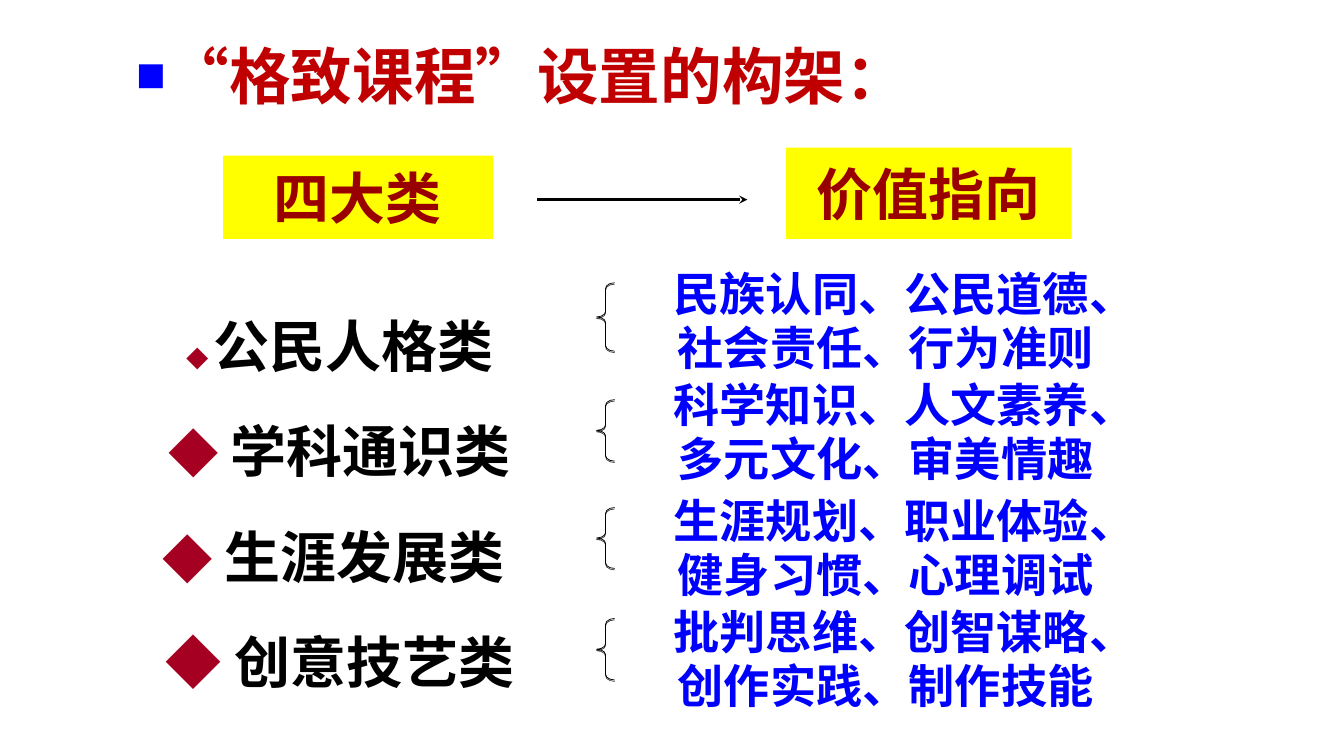
from lxml.etree import SubElement
from pptx import Presentation
from pptx.dml.color import RGBColor
from pptx.enum.shapes import MSO_CONNECTOR, MSO_SHAPE
from pptx.enum.text import MSO_ANCHOR, PP_ALIGN
from pptx.oxml.ns import qn
from pptx.util import Cm, Pt

BLACK = RGBColor(0x00, 0x00, 0x00)
YELLOW = RGBColor(0xFF, 0xFF, 0x00)
BLUE = RGBColor(0x00, 0x00, 0xFF)
RED = RGBColor(0xC0, 0x00, 0x00)
MAROON = RGBColor(0x99, 0x00, 0x00)
CRIMSON = RGBColor(0xA5, 0x00, 0x21)

# category, diamond size, text top, brace top, brace height, two value lines
ROWS = [
    ("公民人格类", 32, 13.46, 14.25, 3.45, ("民族认同、公民道德、", "社会责任、行为准则")),
    ("学科通识类", 72, 19.05, 20.14, 3.1, ("科学知识、人文素养、", "多元文化、审美情趣")),
    ("生涯发展类 ", 72, 24.89, 25.58, 3.07, ("生涯规划、职业体验、", "健身习惯、心理调试")),
    ("创意技艺类", 80, 30.48, 31.17, 3.1, ("批判思维、创智谋略、", "创作实践、制作技能")),
]


def add_xml(parent, tag, **attrs):
    return SubElement(parent, qn(tag), {k: str(v) for k, v in attrs.items()})


class SlideBuilder:
    font = "Noto Sans CJK SC"
    frame_format = {
        "word_wrap": True, "margin_left": 0, "margin_right": 0,
        "margin_top": 0, "margin_bottom": 0,
    }

    def __init__(self, slide):
        self.s = slide

    def format_frame(self, tf, **extra):
        for name, value in {**self.frame_format, **extra}.items():
            setattr(tf, name, value)

    def paragraph(self, tf, runs, spacing=None):
        """Fill the empty first paragraph, or add one, with (text, size, colour) runs."""
        p = tf.paragraphs[0] if not tf.text else tf.add_paragraph()
        p.alignment = PP_ALIGN.CENTER
        p.line_spacing = spacing
        for text, size, color in runs:
            r = p.add_run()
            r.text = text
            for name, value in {"name": self.font, "size": Pt(size), "bold": True}.items():
                setattr(r.font, name, value)
            r.font.color.rgb = color
            add_xml(r._r.get_or_add_rPr(), "a:ea", typeface=self.font)
        return p

    def text(self, x, y, w, h, paragraphs, spacing=None):
        tf = self.s.shapes.add_textbox(Cm(x), Cm(y), Cm(w), Cm(h)).text_frame
        self.format_frame(tf)
        return [self.paragraph(tf, runs, spacing) for runs in paragraphs]

    def heading(self, x, y, w, h, text):
        sp = self.s.shapes.add_shape(MSO_SHAPE.RECTANGLE, Cm(x), Cm(y), Cm(w), Cm(h))
        sp.shadow.inherit = False
        sp.fill.solid()
        sp.fill.fore_color.rgb = YELLOW
        sp.line.fill.background()
        self.format_frame(sp.text_frame, vertical_anchor=MSO_ANCHOR.MIDDLE)
        self.paragraph(sp.text_frame, [(text, 80, MAROON)])

    def brace(self, x, y, w, h):
        sp = self.s.shapes.add_shape(MSO_SHAPE.LEFT_BRACE, Cm(x), Cm(y), Cm(w), Cm(h))
        sp.adjustments[0] = 0.31
        sp.fill.background()
        sp.line.color.rgb = BLACK
        sp.line.width = Pt(1.07)
        sp.shadow.inherit = False
        effects = sp._element.spPr.find(qn("a:effectLst"))
        shadow = add_xml(effects, "a:outerShdw", blurRad=0, dist=Pt(2), dir=5400000)
        color = add_xml(shadow, "a:srgbClr", val=BLACK)
        add_xml(color, "a:alpha", val=75000)

    def arrow(self, x1, y1, x2, y2):
        c = self.s.shapes.add_connector(
            MSO_CONNECTOR.STRAIGHT, Cm(x1), Cm(y1), Cm(x2), Cm(y2))
        c.line.color.rgb = BLACK
        c.line.width = Pt(4)
        add_xml(c.line._get_or_add_ln(), "a:tailEnd", type="stealth")
        add_xml(c._element.spPr, "a:effectLst")

    def bullet(self, p, color, indent):
        pPr = p._p.get_or_add_pPr()
        pPr.set("marL", str(Cm(indent)))
        pPr.set("indent", str(-Cm(indent)))
        add_xml(add_xml(pPr, "a:buClr"), "a:srgbClr", val=color)
        add_xml(pPr, "a:buSzPct", val=80000)
        add_xml(pPr, "a:buFont", typeface="Arial")
        add_xml(pPr, "a:buChar", char="■")


def main():
    prs = Presentation()
    prs.slide_width, prs.slide_height = Cm(67.74), Cm(38.1)
    b = SlideBuilder(prs.slides.add_slide(prs.slide_layouts[6]))

    title, = b.text(0, 1.9, 52.55, 5, [[("“格致课程”设置的构架：", 88, RED)]])
    b.bullet(title, BLUE, 1.6)

    b.heading(11.25, 7.85, 13.59, 4.19, "四大类")
    b.arrow(27.08, 10.06, 37.67, 10.06)
    b.heading(39.62, 7.44, 14.4, 4.6, "价值指向")

    categories = [[("◆ ", size, CRIMSON), (name, 80, BLACK)]
                  for name, size, *_ in ROWS]
    b.text(7.26, 13.77, 19.74, 21.3, categories, Pt(150.5))

    for _, _, top, brace_top, brace_height, lines in ROWS:
        b.brace(30.07, brace_top, 0.91, brace_height)
        first, _ = b.text(27.3, top, 34.67, 5.43,
                          [[(line, 66, BLUE)] for line in lines], Pt(77))
        # offsets the closing comma so both lines align
        first._p.get_or_add_pPr().set("marL", str(Cm(1.9)))

    prs.save("out.pptx")


if __name__ == "__main__":
    main()
